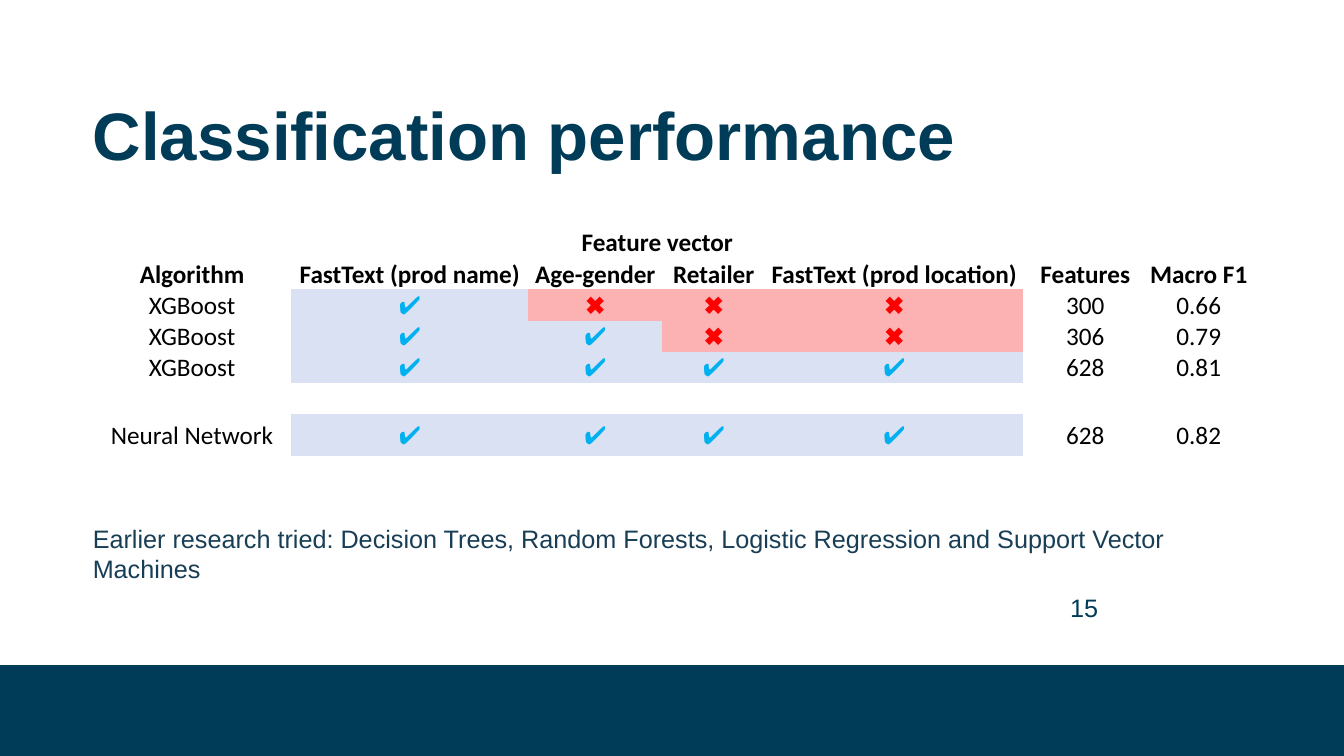
"""Build the classification performance slide with its feature table."""
from dataclasses import dataclass
from typing import Optional

from pptx import Presentation
from pptx.dml.color import RGBColor
from pptx.enum import shapes, text
from pptx.oxml import ns
from pptx.util import Inches, Pt

NAVY = RGBColor(0x00, 0x3C, 0x57)
NUMBER_BLUE = RGBColor(0x00, 0x3B, 0x57)
SLATE = RGBColor(0x18, 0x3E, 0x56)
BLACK = RGBColor(0x00, 0x00, 0x00)
CHECK_BLUE = RGBColor(0x00, 0xB0, 0xF0)
CROSS_RED = RGBColor(0xFF, 0x00, 0x00)
PALE_BLUE = RGBColor(0xD9, 0xE1, 0xF2)
PALE_RED = RGBColor(0xFC, 0xB2, 0xB2)

NO_STYLE = "{2D5ABB26-0587-4C30-8999-92F81FD0307C}"
COLUMN_WIDTHS = [1.97, 2.35, 1.33, 1.02, 2.56, 1.23, 1.02]
ROW_HEIGHTS = [0.31] * 6 + [0.41]
HEADERS = ["Algorithm", "FastText (prod name)", "Age-gender", "Retailer",
           "FastText (prod location)", "Features", "Macro F1"]
MARKS = {"✔": (CHECK_BLUE, PALE_BLUE), "✖": (CROSS_RED, PALE_RED)}


@dataclass(frozen=True)
class Result:
    algorithm: str
    marks: str
    features: str
    macro_f1: str

    def cells(self) -> list[str]:
        return [self.algorithm, *self.marks, self.features, self.macro_f1]


@dataclass(frozen=True)
class Style:
    font: str
    size: int
    color: RGBColor
    bold: bool = False
    align: text.PP_ALIGN = text.PP_ALIGN.LEFT


RESULTS = [
    Result("XGBoost", "✔✖✖✖", "300", "0.66"),
    Result("XGBoost", "✔✔✖✖", "306", "0.79"),
    Result("XGBoost", "✔✔✔✔", "628", "0.81"),
    Result("Neural Network", "✔✔✔✔", "628", "0.82"),
]


def write(tf, words: str, style: Style) -> None:
    p = tf.paragraphs[0]
    p.alignment = style.align
    r = p.add_run()
    r.text = words
    r.font.name = style.font
    r.font.size = Pt(style.size)
    r.font.bold = style.bold
    r.font.color.rgb = style.color


def set_frame(tf, anchor: text.MSO_ANCHOR) -> None:
    tf.word_wrap = True
    tf.auto_size = text.MSO_AUTO_SIZE.SHAPE_TO_FIT_TEXT
    tf.vertical_anchor = anchor
    tf.margin_left = 0


def fill_cell(cell, words: str, bold: bool) -> None:
    color, shade = MARKS.get(words, (BLACK, None))
    cell.margin_left = cell.margin_right = cell.margin_top = Inches(0.01)
    cell.margin_bottom = 0
    cell.vertical_anchor = text.MSO_ANCHOR.MIDDLE
    if shade is None:
        cell.fill.background()
    else:
        cell.fill.solid()
        cell.fill.fore_color.rgb = shade
    write(cell.text_frame, words,
          Style("Calibri", 18, color, bold, text.PP_ALIGN.CENTER))


def add_results(s) -> None:
    blank = [""] * len(HEADERS)
    group = ["", "Feature vector"] + [""] * 5
    body = [result.cells() for result in RESULTS]
    rows = [group, HEADERS, *body[:3], blank, body[3]]
    frame = s.shapes.add_table(len(rows), len(HEADERS), Inches(0.92), Inches(2.25),
                               Inches(sum(COLUMN_WIDTHS)), Inches(sum(ROW_HEIGHTS)))
    for style_id in frame.element.iter(ns.qn("a:tableStyleId")):
        style_id.text = NO_STYLE
    table = frame.table
    table.first_row = table.horz_banding = False
    for column, width in zip(table.columns, COLUMN_WIDTHS):
        column.width = Inches(width)
    for row, height in zip(table.rows, ROW_HEIGHTS):
        row.height = Inches(height)
    table.cell(0, 1).merge(table.cell(0, 4))
    for i, row in enumerate(rows):
        for j, words in enumerate(row):
            fill_cell(table.cell(i, j), words, bold=i < 2)


def add_text(s, box: tuple[float, float, float, float], words: str, style: Style,
             anchor: Optional[text.MSO_ANCHOR] = None) -> None:
    tf = s.shapes.add_textbox(*map(Inches, box)).text_frame
    tf.word_wrap = True
    if anchor is not None:
        set_frame(tf, anchor)
    write(tf, words, style)


def add_band(s) -> None:
    sp = s.shapes.add_shape(shapes.MSO_SHAPE.RECTANGLE, 0, Inches(6.6),
                            Inches(13.33), Inches(0.9))
    sp.shadow.inherit = False
    sp.fill.solid()
    sp.fill.fore_color.rgb = NAVY
    sp.line.fill.background()


def add_title(s) -> None:
    title = s.shapes.title
    title.left, title.top = Inches(0.92), Inches(0.97)
    title.width, title.height = Inches(11.5), Inches(0.83)
    set_frame(title.text_frame, text.MSO_ANCHOR.TOP)
    write(title.text_frame, "Classification performance", Style("Arial", 48, NAVY, True))
    p = title.text_frame.paragraphs[0]
    p.line_spacing = 0.9
    p.space_after = Pt(10)


def main() -> None:
    prs = Presentation()
    prs.slide_width, prs.slide_height = Inches(13.33), Inches(7.5)
    s = prs.slides.add_slide(prs.slide_layouts[5])
    add_band(s)
    add_title(s)
    add_text(s, (10.39, 5.83, 0.6, 0.43), "15",
             Style("Arial", 18, NUMBER_BLUE, align=text.PP_ALIGN.RIGHT))
    add_results(s)
    add_text(s, (0.92, 5.13, 11.41, 0.71),
             "Earlier research tried: Decision Trees, Random Forests, "
             "Logistic Regression and Support Vector Machines",
             Style("Arial", 18, SLATE), text.MSO_ANCHOR.BOTTOM)
    prs.save("out.pptx")


if __name__ == "__main__":
    main()
